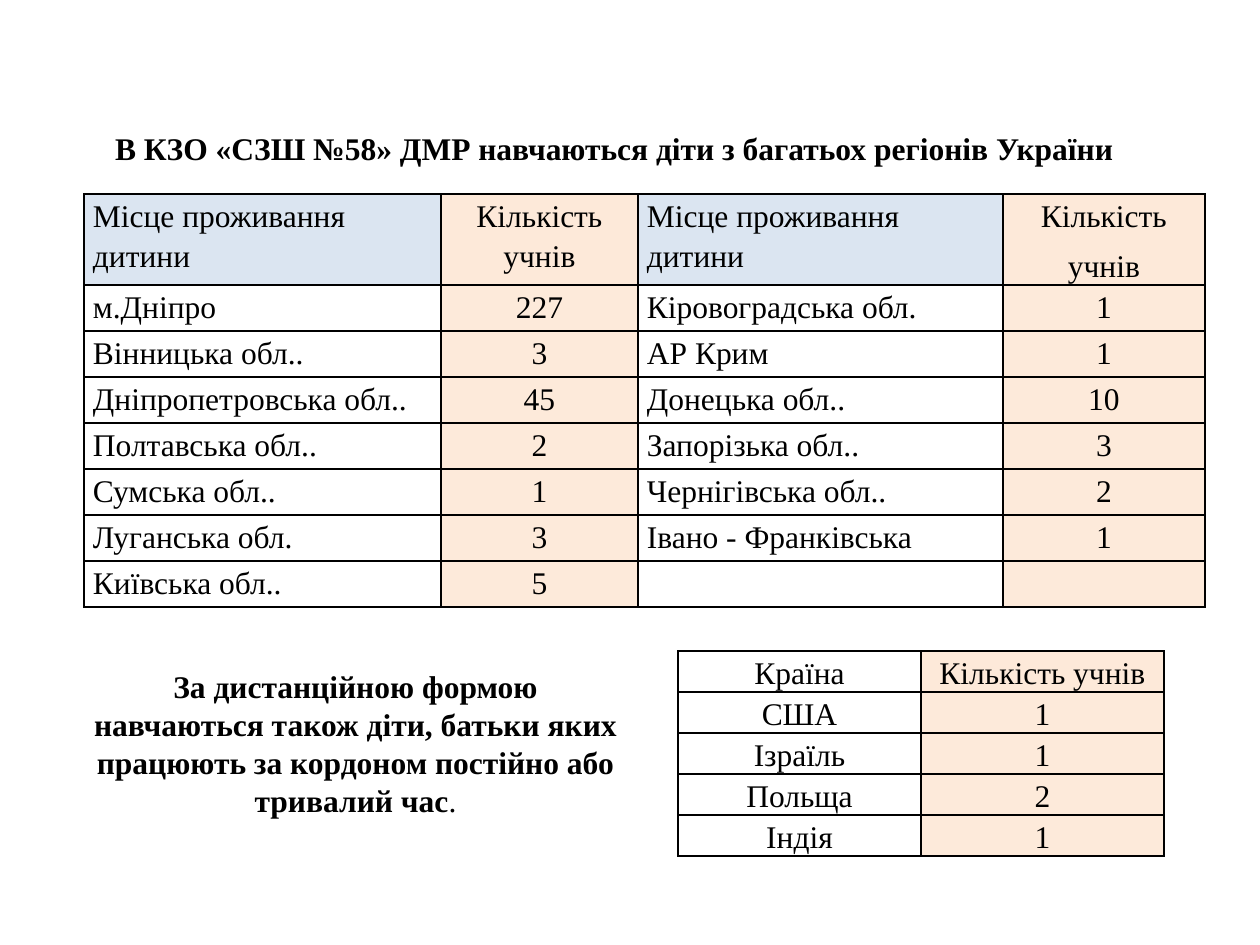
from dataclasses import dataclass

from lxml.etree import SubElement
from pptx import Presentation
from pptx.dml.color import RGBColor as Rgb
from pptx.enum.text import MSO_ANCHOR as Anchor, PP_ALIGN as Align
from pptx.oxml.ns import qn
from pptx.util import Emu, Pt


@dataclass(frozen=True)
class Theme:
    font: str = "Times New Roman"
    size: int = 18
    ink: str = "000000"
    place_head: str = "DBE5F1"
    count_head: str = "FDE9D9"
    count: str = "FDEADA"
    border: float = 1
    line_spacing: float = 1.15
    space_after: int = 6


THEME = Theme()
REGIONS = [
    ["Місце проживання дитини", "Кількість учнів", "Місце проживання дитини", "Кількість\nучнів"],
    ["м.Дніпро", "227", "Кіровоградська обл.", "1"],
    ["Вінницька обл..", "3", "АР Крим", "1"],
    ["Дніпропетровська обл..", "45", "Донецька обл..", "10"],
    ["Полтавська обл..", "2", "Запорізька обл..", "3"],
    ["Сумська обл..", "1", "Чернігівська обл..", "2"],
    ["Луганська обл.", "3", "Івано - Франківська", "1"],
    ["Київська обл..", "5", "", ""],
]
COUNTRIES = [
    ["Країна", "Кількість учнів"],
    ["США", "1"],
    ["Ізраїль", "1"],
    ["Польща", "2"],
    ["Індія", "1"],
]


def px(length):
    return Emu(round(length * 914400 / 126))


def style(paragraph, align, bold=None):
    paragraph.alignment = align
    font = paragraph.font
    font.name = THEME.font
    font.size = Pt(THEME.size)
    font.bold = bold
    font.color.rgb = Rgb.from_string(THEME.ink)


def space(paragraph):
    paragraph.line_spacing = THEME.line_spacing
    paragraph.space_after = Pt(THEME.space_after)


def add_borders(cell):
    properties = cell._tc.get_or_add_tcPr()
    for side in ("a:lnL", "a:lnR", "a:lnT", "a:lnB"):
        line = SubElement(properties, qn(side), w=str(Pt(THEME.border)))
        fill = SubElement(line, qn("a:solidFill"))
        SubElement(fill, qn("a:srgbClr"), val=THEME.ink)


def fill_cell(cell, text, align, color):
    cell.margin_left = cell.margin_right = px(9)
    cell.margin_top = cell.margin_bottom = 0
    add_borders(cell)
    if color:
        cell.fill.solid()
        cell.fill.fore_color.rgb = Rgb.from_string(color)
    else:
        cell.fill.background()
    cell.text = text
    for paragraph in cell.text_frame.paragraphs:
        style(paragraph, align)
        space(paragraph)


def add_title(slide, left, top, width, height):
    title = slide.shapes.title
    title.left, title.top, title.width, title.height = map(px, (left, top, width, height))
    title.text = "В КЗО «СЗШ №58» ДМР навчаються діти з багатьох регіонів України"
    title.text_frame.vertical_anchor = Anchor.MIDDLE
    heading = title.text_frame.paragraphs[0]
    indents = heading._p.get_or_add_pPr()
    indents.set("marL", str(px(1)))
    indents.set("indent", str(px(62)))
    style(heading, Align.CENTER, bold=True)
    space(heading)


def add_pupil_table(slide, left, top, records, widths, heights, place_align, place_head=None):
    frame = slide.shapes.add_table(
        len(records), len(widths), px(left), px(top), px(sum(widths)), px(sum(heights)))
    table = frame.table
    table.first_row = table.horz_banding = False
    for column, width in zip(table.columns, widths):
        column.width = px(width)
    for row, height in zip(table.rows, heights):
        row.height = px(height)
    for r, record in enumerate(records):
        place_color, count_color = (None, THEME.count) if r else (place_head, THEME.count_head)
        for c, text in enumerate(record):
            is_count = c % 2 == 1
            fill_cell(table.cell(r, c), text,
                      Align.CENTER if is_count else place_align,
                      count_color if is_count else place_color)


def add_bold_run(paragraph, text, bold):
    run = paragraph.add_run()
    run.text = text
    run.font.bold = bold


def add_abroad_note(slide, left, top, width, height):
    note = slide.shapes.add_textbox(*map(px, (left, top, width, height))).text_frame
    note.word_wrap = True
    statement = note.paragraphs[0]
    style(statement, Align.CENTER)
    add_bold_run(statement, "За дистанційною формою", True)
    statement.add_line_break()
    add_bold_run(statement, "навчаються також діти, батьки яких "
                            "працюють за кордоном постійно або тривалий час", True)
    add_bold_run(statement, ".", False)


def main():
    deck = Presentation()
    deck.slide_width, deck.slide_height = px(1260), px(945)
    slide = deck.slides.add_slide(deck.slide_layouts[5])
    add_title(slide, 0, 86, 1166, 118)
    add_pupil_table(slide, 84, 194, REGIONS, [357, 197, 365, 202], [91] + [46] * 7,
                    Align.LEFT, THEME.place_head)
    add_pupil_table(slide, 678, 651, COUNTRIES, [243] * 2, [41] * 5, Align.CENTER)
    add_abroad_note(slide, 74, 661, 563, 165)
    deck.save("out.pptx")


if __name__ == "__main__":
    main()
